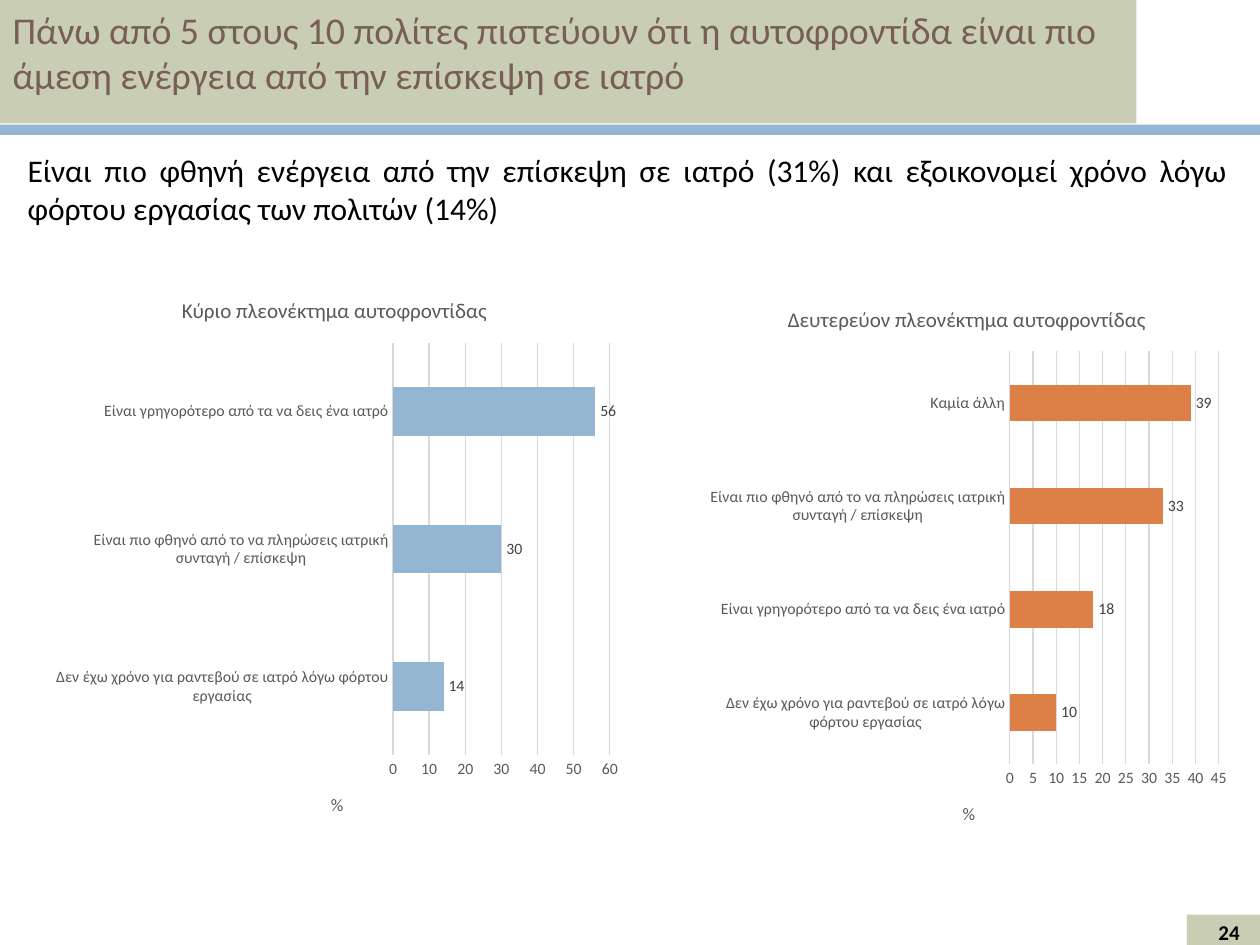
"""Build a slide with two bar charts on the benefits of self-care."""
from lxml.etree import SubElement
from pptx import Presentation
from pptx.chart.data import CategoryChartData as Data
from pptx.dml.color import RGBColor as Rgb
from pptx.enum.chart import XL_CHART_TYPE as Kind, XL_LABEL_POSITION as Spot
from pptx.enum.chart import XL_TICK_MARK as Tick
from pptx.enum.shapes import MSO_SHAPE as Form
from pptx.enum.text import MSO_ANCHOR as Anchor, MSO_AUTO_SIZE as Fit, PP_ALIGN as Align
from pptx.oxml.ns import qn
from pptx.util import Inches, Pt

HUES = {"sage": "C9CDB3", "blue": "94B6D2", "orange": "DD8047", "brown": "775F55",
        "black": "000000", "gray": "595959", "dark": "404040", "grid": "D9D9D9"}

deck = Presentation()
deck.slide_width, deck.slide_height = Inches(10), Inches(7.5)
COL, ROW = deck.slide_width / 100, deck.slide_height / 100
slide = deck.slides.add_slide(deck.slide_layouts[5])
shapes = slide.shapes


def place(x, y, w, h):
    return [int(n) for n in (x * COL, y * ROW, w * COL, h * ROW)]


def style(font, size, hue, bold=False):
    look = {"name": "Calibri", "size": Pt(size), "bold": bold}
    for key, val in look.items():
        setattr(font, key, val)
    font.color.rgb = Rgb.from_string(HUES[hue])


strips = [((94.2, 96.8, 5.8, 3.2), "sage"), ((0, 13.2, 100, 1.07), "blue")]
for spot, hue in strips:
    strip = shapes.add_shape(Form.RECTANGLE, *place(*spot))
    strip.shadow.inherit = False
    strip.fill.solid()
    strip.fill.fore_color.rgb = Rgb.from_string(HUES[hue])
    strip.line.fill.background()

title = shapes.title
title.left, title.top, title.width, title.height = place(0, 0, 90.2, 13.07)
title.fill.solid()
title.fill.fore_color.rgb = Rgb.from_string(HUES["sage"])
lead = shapes.add_textbox(*place(1.2, 15.33, 97.2, 9.47))
page = shapes.add_textbox(*place(95.7, 97.2, 3.7, 3.6))

texts = [
    (title, "Πάνω από 5 στους 10 πολίτες πιστεύουν ότι η αυτοφροντίδα είναι πιο "
     "άμεση ενέργεια από την επίσκεψη σε ιατρό", 21.6, "brown", False, Align.LEFT, 1, True),
    (lead, "Είναι πιο φθηνή ενέργεια από την επίσκεψη σε ιατρό (31%) και εξοικονομεί "
     "χρόνο λόγω φόρτου εργασίας των πολιτών (14%)", 18, "black", False, Align.JUSTIFY, 1, True),
    (page, "24", 12, "black", True, Align.CENTER, 0.8, False),
]
for box, words, size, hue, bold, side, gap, wrap in texts:
    frame = box.text_frame
    frame.text = words
    form = {"word_wrap": wrap, "auto_size": Fit.NONE, "vertical_anchor": Anchor.TOP}
    for key, val in form.items():
        setattr(frame, key, val)
    para = frame.paragraphs[0]
    para.alignment, para.line_spacing = side, gap
    style(para.runs[0].font, size, hue, bold)

BUSY = "Δεν έχω χρόνο για ραντεβού σε ιατρό λόγω φόρτου εργασίας"
CHEAP = "Είναι πιο φθηνό από το να πληρώσεις ιατρική συνταγή / επίσκεψη"
FAST = "Είναι γρηγορότερο από τα να δεις ένα ιατρό"
charts = [
    ("Κύριο πλεονέκτημα αυτοφροντίδας", (3.3, 29.07, 46.5, 59.87), "blue",
     {BUSY: 14, CHEAP: 30, FAST: 56}, 60, 10, (0.6, 0.12, 0.37, 0.73)),
    ("Δευτερεύον πλεονέκτημα αυτοφροντίδας", (55.5, 30, 42.5, 59.87), "orange",
     {BUSY: 10, FAST: 18, CHEAP: 33, "Καμία άλλη": 39}, 45, 5, (0.58, 0.12, 0.39, 0.73)),
]
for name, spot, hue, vals, top, step, area in charts:
    data = Data(number_format="#,##0")
    data.categories = list(vals)
    data.add_series("Series 1", list(vals.values()))
    chart = shapes.add_chart(Kind.BAR_CLUSTERED, *place(*spot), data).chart
    style(chart.font, 10, "black")
    chart.has_legend = False
    chart.has_title = True
    chart.chart_title.include_in_layout = False
    cat, val = chart.category_axis, chart.value_axis
    val.has_title = True
    for head, words, size in ((chart.chart_title, name, 12), (val.axis_title, "%", 10)):
        head.text_frame.text = words
        style(head.text_frame.paragraphs[0].runs[0].font, size, "gray")

    for axis in (cat, val):
        axis.major_tick_mark = axis.minor_tick_mark = Tick.NONE
        style(axis.tick_labels.font, 9, "gray")
    scale = {"minimum_scale": 0, "maximum_scale": top, "major_unit": step,
             "has_major_gridlines": True}
    for key, num in scale.items():
        setattr(val, key, num)
    val.tick_labels.number_format = "#,##0"
    val.tick_labels.number_format_is_linked = False
    val.format.line.fill.background()
    for line in (cat.format.line, val.major_gridlines.format.line):
        line.color.rgb = Rgb.from_string(HUES["grid"])
        line.width = Pt(0.75)

    plot = chart.plots[0]
    plot.gap_width, plot.vary_by_categories = 182, False
    bars = plot.series[0]
    bars.format.fill.solid()
    bars.format.fill.fore_color.rgb = Rgb.from_string(HUES[hue])
    marks = bars.data_labels
    form = {"show_value": True, "number_format": "#,##0",
            "number_format_is_linked": False, "position": Spot.OUTSIDE_END}
    for key, item in form.items():
        setattr(marks, key, item)
    style(marks.font, 9, "dark")

    region = chart._chartSpace.chart.plotArea
    for old in region.findall(qn("c:layout")):
        region.remove(old)
    layout = SubElement(region, qn("c:layout"))
    region.insert(0, layout)
    manual = SubElement(layout, qn("c:manualLayout"))
    rules = [("layoutTarget", "inner"), ("xMode", "edge"), ("yMode", "edge"),
             *zip("xywh", area)]
    for tag, item in rules:
        SubElement(manual, qn(f"c:{tag}")).set("val", str(item))

deck.save("out.pptx")
